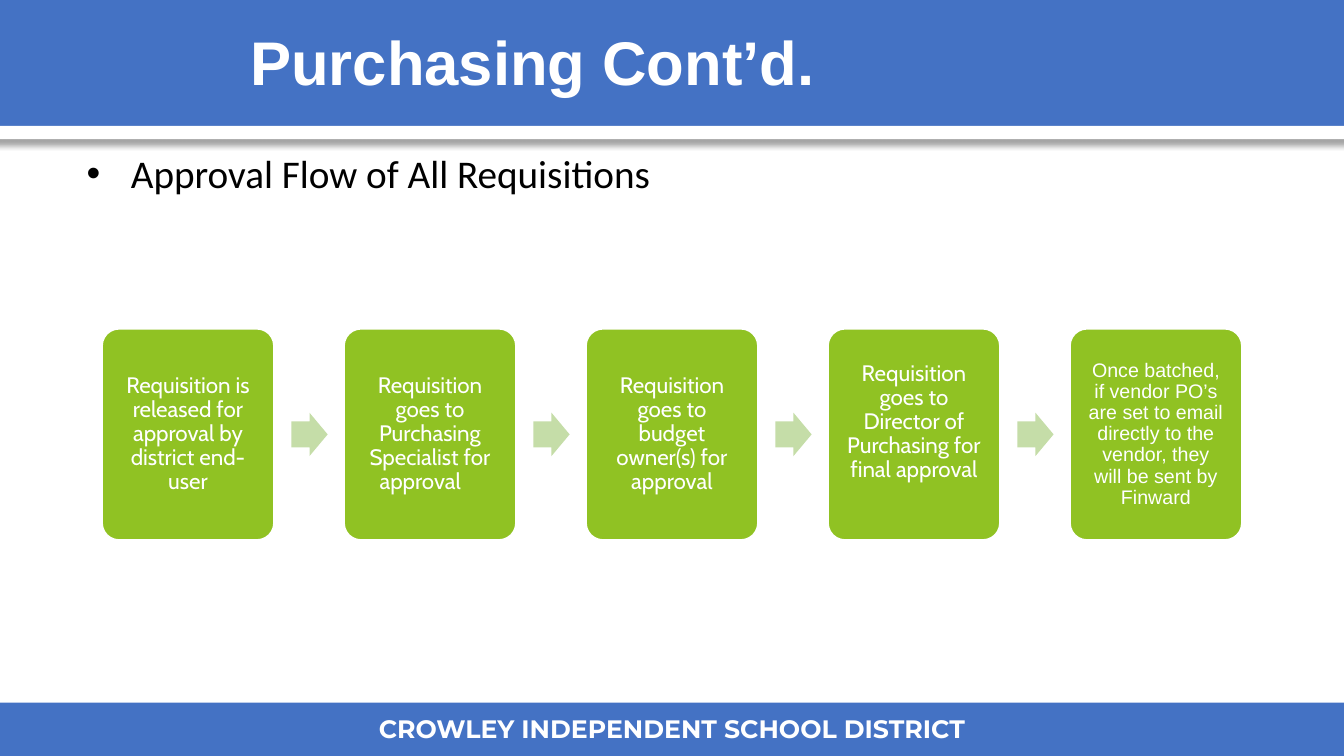
from lxml import etree
from pptx import Presentation, oxml
from pptx import util as u
from pptx.dml.color import RGBColor
from pptx.enum import shapes, text

BLUE = RGBColor(0x44, 0x72, 0xC4)
GREEN = RGBColor(0x90, 0xC2, 0x23)
PALE_GREEN = RGBColor(0xC5, 0xDD, 0xA8)
WHITE = RGBColor(0xFF, 0xFF, 0xFF)
BLACK = RGBColor(0x00, 0x00, 0x00)
NS = "http://schemas.openxmlformats.org/drawingml/2006/main"
SHADOW = (
    f'<a:effectLst xmlns:a="{NS}"><a:outerShdw blurRad="50800" dist="50800" '
    'dir="5400000" rotWithShape="0"><a:srgbClr val="A5A5A5"/></a:outerShdw></a:effectLst>'
)
STEP_PITCH = 2.4
STEP_WIDTH = 1.71
ARROW_WIDTH, ARROW_HEIGHT = 0.36, 0.43
STEPS = [
    ("Requisition is released for approval by district end-user", "Cabin", 16, 0),
    ("Requisition goes to Purchasing Specialist for approval\t", "Cabin", 16, 0),
    ("Requisition goes to budget owner(s) for approval", "Cabin", 16, 0),
    ("Requisition goes to Director of Purchasing for final approval", "Cabin", 16, 0.24),
    ("Once batched, if vendor PO’s are set to email directly to the vendor, "
     "they will be sent by Finward", "Arial", 14, 0),
]


def inches(box):
    """Convert left, top, width and height to lengths."""
    return [u.Inches(value) for value in box]


def style(para, name, size, color, bold=False):
    """Set the font of a whole paragraph."""
    font = para.font
    font.name, font.size, font.bold = name, u.Pt(size), bold
    font.color.rgb = color


def add_filled(page, kind, box, color):
    """Add a flat preset shape without outline."""
    shape = page.shapes.add_shape(kind, *inches(box))
    shape.shadow.inherit = False
    shape.fill.solid()
    shape.fill.fore_color.rgb = color
    shape.line.fill.background()
    return shape


def add_text(page, box, words, name, size, color, bold=False):
    """Add a wrapping text box and return its paragraph."""
    frame = page.shapes.add_textbox(*inches(box)).text_frame
    frame.word_wrap = True
    para = frame.paragraphs[0]
    para.text = words
    style(para, name, size, color, bold)
    return para


def add_bands(page):
    """Draw the header, its shadowed rule and the footer."""
    rectangle = shapes.MSO_SHAPE.RECTANGLE
    add_filled(page, rectangle, (-0.18, 0, 13.74, 1.25), BLUE)
    rule = add_filled(page, rectangle, (-0.18, 1.25, 13.84, 0.13), WHITE)
    properties = rule.element.spPr
    properties.replace(properties.find(f"{{{NS}}}effectLst"), oxml.parse_xml(SHADOW))
    add_filled(page, rectangle, (0, 6.97, 13.33, 0.53), BLUE)
    footer = add_text(page, (0, 7.03, 13.33, 0.4), "CROWLEY INDEPENDENT SCHOOL DISTRICT",
                      "Montserrat", 18, WHITE, True)
    footer.alignment = text.PP_ALIGN.CENTER


def place_title(page, box):
    """Put the title placeholder above the header band."""
    title = page.shapes.title
    title.left, title.top, title.width, title.height = inches(box)
    page.shapes.element.append(title.element)
    title.text_frame.text = "Purchasing Cont’d. "
    title.text_frame.vertical_anchor = text.MSO_ANCHOR.MIDDLE
    para = title.text_frame.paragraphs[0]
    para.alignment = text.PP_ALIGN.CENTER
    para.line_spacing = 0.9
    style(para, "Arial", 44, WHITE, True)


def add_bullet(page, box):
    """Add the bulleted heading of the flow."""
    para = add_text(page, box, "Approval Flow of All Requisitions", "Calibri", 28, BLACK)
    para.line_spacing = 0.9
    properties = para.font._element.getparent()
    properties.set("marL", str(u.Inches(0.5)))
    properties.set("indent", str(u.Inches(-0.44)))
    bullet_font = etree.Element(f"{{{NS}}}buFont", typeface="Arial")
    bullet = etree.Element(f"{{{NS}}}buChar", char="•")
    para.font._element.addprevious(bullet_font)
    para.font._element.addprevious(bullet)


def add_step(page, box, words, name, size, lift):
    """Add one rounded step, its text raised by extra space below."""
    step = add_filled(page, shapes.MSO_SHAPE.ROUNDED_RECTANGLE, box, GREEN)
    step.adjustments[0] = 0.1
    step.line.color.rgb = WHITE
    step.line.width = u.Pt(1.5)
    frame = step.text_frame
    frame.word_wrap = True
    frame.vertical_anchor = text.MSO_ANCHOR.MIDDLE
    frame.margin_left = frame.margin_right = frame.margin_top = u.Inches(0.12)
    frame.margin_bottom = u.Inches(0.12 + lift)
    para = frame.paragraphs[0]
    para.text = words
    para.alignment = text.PP_ALIGN.CENTER
    para.line_spacing = 0.9
    style(para, name, size, WHITE)


def add_flow(page, left, top, height):
    """Lay out the steps at an even pitch with an arrow in each gap."""
    for index, step in enumerate(STEPS):
        x = left + index * STEP_PITCH
        add_step(page, (x, top, STEP_WIDTH, height), *step)
        if index < len(STEPS) - 1:
            arrow_box = (x + STEP_WIDTH + 0.17, top + (height - ARROW_HEIGHT) / 2,
                         ARROW_WIDTH, ARROW_HEIGHT)
            arrow = add_filled(page, shapes.MSO_SHAPE.RIGHT_ARROW, arrow_box, PALE_GREEN)
            arrow.adjustments[0] = 0.6
            arrow.adjustments[1] = 0.5


def main():
    """Build the slide and save it."""
    deck = Presentation()
    deck.slide_width, deck.slide_height = u.Inches(13.33), u.Inches(7.5)
    page = deck.slides.add_slide(deck.slide_layouts[5])
    add_bands(page)
    place_title(page, (0.7, 0.23, 9.34, 0.85))
    add_bullet(page, (0.7, 1.48, 11.91, 5.39))
    add_flow(page, 1.01, 3.26, 2.1)
    deck.save("out.pptx")


if __name__ == "__main__":
    main()
